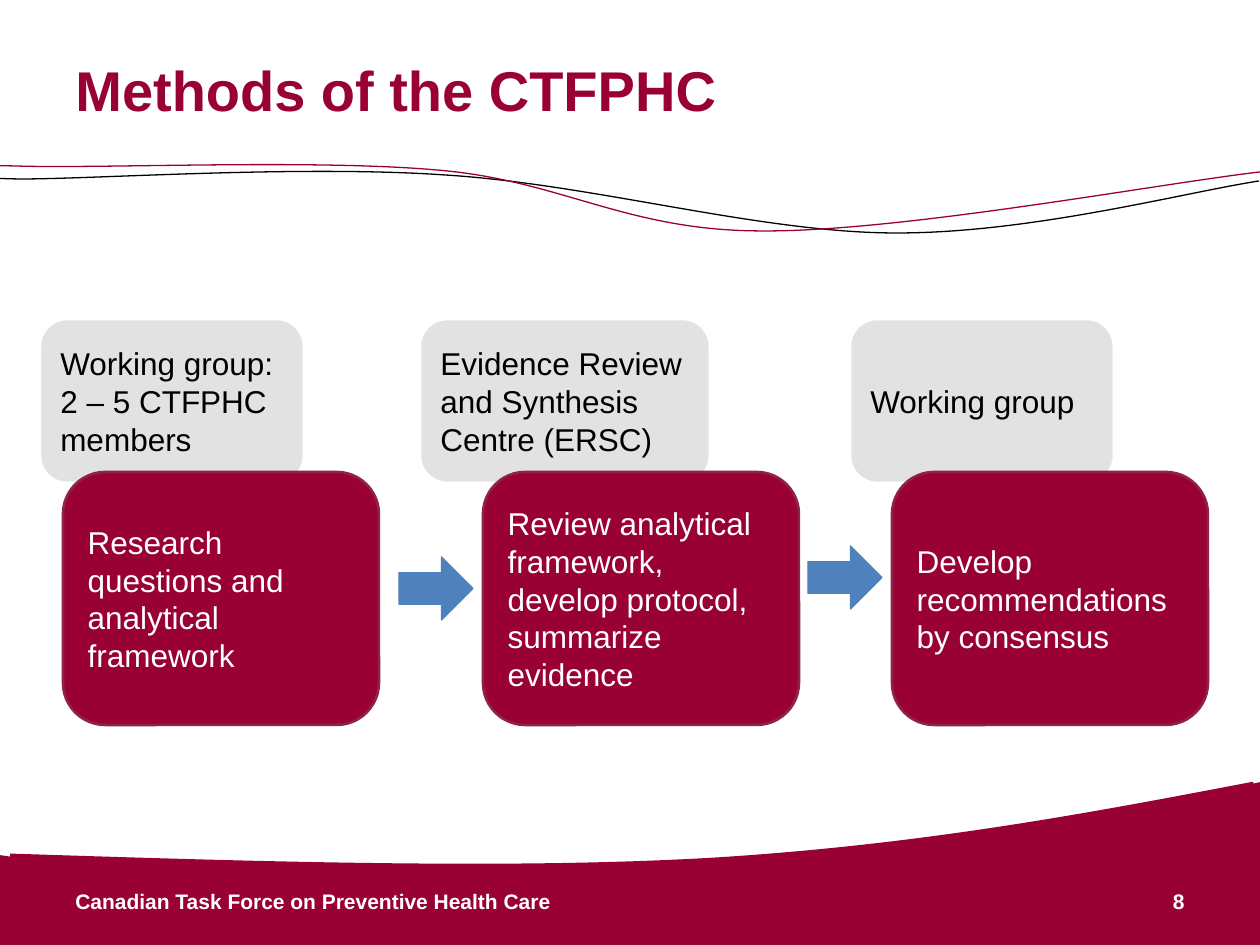
from dataclasses import dataclass

from lxml import etree
from pptx import Presentation, util as u
from pptx.dml.color import RGBColor
from pptx.enum import shapes, text
from pptx.oxml import ns


@dataclass(frozen=True)
class Theme:
    font: str = "Arial"
    maroon: str = "990033"
    task_edge: str = "90214A"
    role: str = "D9D9D9"
    arrow: str = "4F81BD"
    black: str = "000000"
    white: str = "FFFFFF"
    title_size: int = 32
    body_size: int = 18
    footer_size: int = 12


THEME = Theme()
PX = 914400 / 126
WIDTH, HEIGHT = 1260, 945

# Content: each step has a role (left, width, paragraphs) and a task (left, text)
TITLE = "Methods of the CTFPHC"
FOOTER = "Canadian Task Force on Preventive Health Care"
PAGE = "8"
STEPS = [
    {"role": (40, 264, ["Working group:", "2 – 5 CTFPHC members"]),
     "task": (63, "Research questions and analytical framework")},
    {"role": (420, 290, ["Evidence Review and Synthesis Centre (ERSC)"]),
     "task": (483, "Review analytical framework, develop protocol, summarize evidence")},
    {"role": (850, 264, ["Working group"]),
     "task": (892, "Develop recommendations by consensus")},
]
ROLE_TOP, ROLE_HEIGHT = 319, 164
TASK_TOP, TASK_WIDTH, TASK_HEIGHT = 472, 316, 253
ARROW_WIDTH, ARROW_HEIGHT, ARROW_GAP = 74, 63, 10
ARROW_TOPS = [557, 546]

# Outlines: a start point, then segments of one point (line) or three (curve)
BLACK_WAVE = [[(-11, 169)],
              [(-5, 171), (-54, 178), (21, 179)],
              [(98, 179), (300, 165), (445, 175)],
              [(591, 184), (757, 232), (892, 233)],
              [(1028, 234), (1182, 193), (1259, 181)]]
MAROON_WAVE = [[(-35, 158)],
               [(-28, 159), (-63, 165), (15, 166)],
               [(95, 169), (311, 159), (436, 170)],
               [(561, 180), (625, 231), (762, 231)],
               [(900, 232), (1157, 184), (1260, 172)]]
BAND_CREST = [[(10, 858)],
              [(258, 866), (508, 874), (714, 862)],
              [(922, 849), (1087, 818), (1254, 786)]]
BAND = [[(1, 944)], [(0, 857)], [(35, 862)], [(86, 862)], [(147, 864)],
        [(224, 866)], [(333, 868)], [(413, 869)], [(571, 869)], [(625, 866)],
        [(735, 862)], [(810, 854)], [(966, 838)], [(1056, 824)], [(1150, 805)],
        [(1173, 801), (1196, 793), (1220, 793)],
        [(1260, 784)], [(1260, 950)]]


def emu(px):
    return u.Emu(round(px * PX))


def rgb(colour):
    return RGBColor.from_string(colour)


def paint(shape, fill, line, weight):
    shape.shadow.inherit = False
    if fill:
        shape.fill.solid()
        shape.fill.fore_color.rgb = rgb(fill)
    else:
        shape.fill.background()
    shape.line.color.rgb = rgb(line)
    shape.line.width = u.Pt(weight)


def bend_segments(shape, segments):
    """Join each three consecutive line targets of a curve into one Bézier."""
    targets = iter(list(shape._element.iter(ns.qn("a:lnTo"))))
    for segment in segments:
        lines = [next(targets) for _ in segment]
        if len(lines) == 3:
            curve = etree.Element(ns.qn("a:cubicBezTo"))
            lines[0].addprevious(curve)
            for line in lines:
                curve.append(line[0])
                line.getparent().remove(line)


def add_outline(slide, outline, line, weight, fill=None):
    spots = [(emu(x), emu(y)) for segment in outline for x, y in segment]
    builder = slide.shapes.build_freeform(*spots[0], scale=1.0)
    builder.add_line_segments(spots[1:], close=False)
    if fill:
        builder.add_line_segments([], close=True)
    shape = builder.convert_to_shape()
    bend_segments(shape, outline[1:])
    paint(shape, fill, line, weight)


def write(shape, paragraphs, size, colour, bold=False, align=text.PP_ALIGN.LEFT):
    frame = shape.text_frame
    frame.word_wrap = True
    frame.vertical_anchor = text.MSO_ANCHOR.MIDDLE
    for index, words in enumerate(paragraphs):
        paragraph = frame.add_paragraph() if index else frame.paragraphs[0]
        paragraph.alignment = align
        run = paragraph.add_run()
        run.text = words
        run.font.name = THEME.font
        run.font.size = u.Pt(size)
        run.font.bold = bold
        run.font.color.rgb = rgb(colour)


def add_label(slide, box, words, size, colour, align=text.PP_ALIGN.LEFT):
    label = slide.shapes.add_textbox(*map(emu, box))
    write(label, [words], size, colour, True, align)


def add_preset(slide, kind, box, fill, line, weight):
    shape = slide.shapes.add_shape(kind, *map(emu, box))
    paint(shape, fill, line, weight)
    return shape


def add_card(slide, box, paragraphs, fill, line, colour):
    card = add_preset(slide, shapes.MSO_SHAPE.ROUNDED_RECTANGLE, box, fill, line, 1.5)
    write(card, paragraphs, THEME.body_size, colour)
    return card


def set_opacity(shape, percent):
    colour = shape.fill._xPr.find(ns.qn("a:solidFill"))[0]
    etree.SubElement(colour, ns.qn("a:alpha")).set("val", str(percent * 1000))


def main():
    deck = Presentation()
    deck.slide_width, deck.slide_height = emu(WIDTH), emu(HEIGHT)
    slide = deck.slides.add_slide(deck.slide_layouts[6])

    # Waves and footer band
    add_outline(slide, BLACK_WAVE, THEME.black, 0.75)
    add_outline(slide, MAROON_WAVE, THEME.maroon, 0.75)
    add_outline(slide, BAND_CREST, THEME.maroon, 5)
    add_outline(slide, BAND, THEME.maroon, 2, THEME.maroon)

    # Title and footer
    add_label(slide, (63, 10, 1134, 158), TITLE, THEME.title_size, THEME.maroon)
    add_label(slide, (63, 876, 766, 50), FOOTER, THEME.footer_size, THEME.white)
    add_label(slide, (903, 876, 294, 50), PAGE, THEME.footer_size, THEME.white,
              text.PP_ALIGN.RIGHT)

    # Steps: each task overlaps the role above it
    for step in STEPS:
        left, width, lines = step["role"]
        role = add_card(slide, (left, ROLE_TOP, width, ROLE_HEIGHT), lines,
                        THEME.role, THEME.white, THEME.black)
        set_opacity(role, 75)
        left, words = step["task"]
        add_card(slide, (left, TASK_TOP, TASK_WIDTH, TASK_HEIGHT), [words],
                 THEME.maroon, THEME.task_edge, THEME.white)

    # Arrows end just before the next task
    for step, top in zip(STEPS[1:], ARROW_TOPS):
        left = step["task"][0] - ARROW_GAP - ARROW_WIDTH
        add_preset(slide, shapes.MSO_SHAPE.RIGHT_ARROW,
                   (left, top, ARROW_WIDTH, ARROW_HEIGHT),
                   THEME.arrow, THEME.arrow, 0.75)

    deck.save("out.pptx")


if __name__ == "__main__":
    main()
